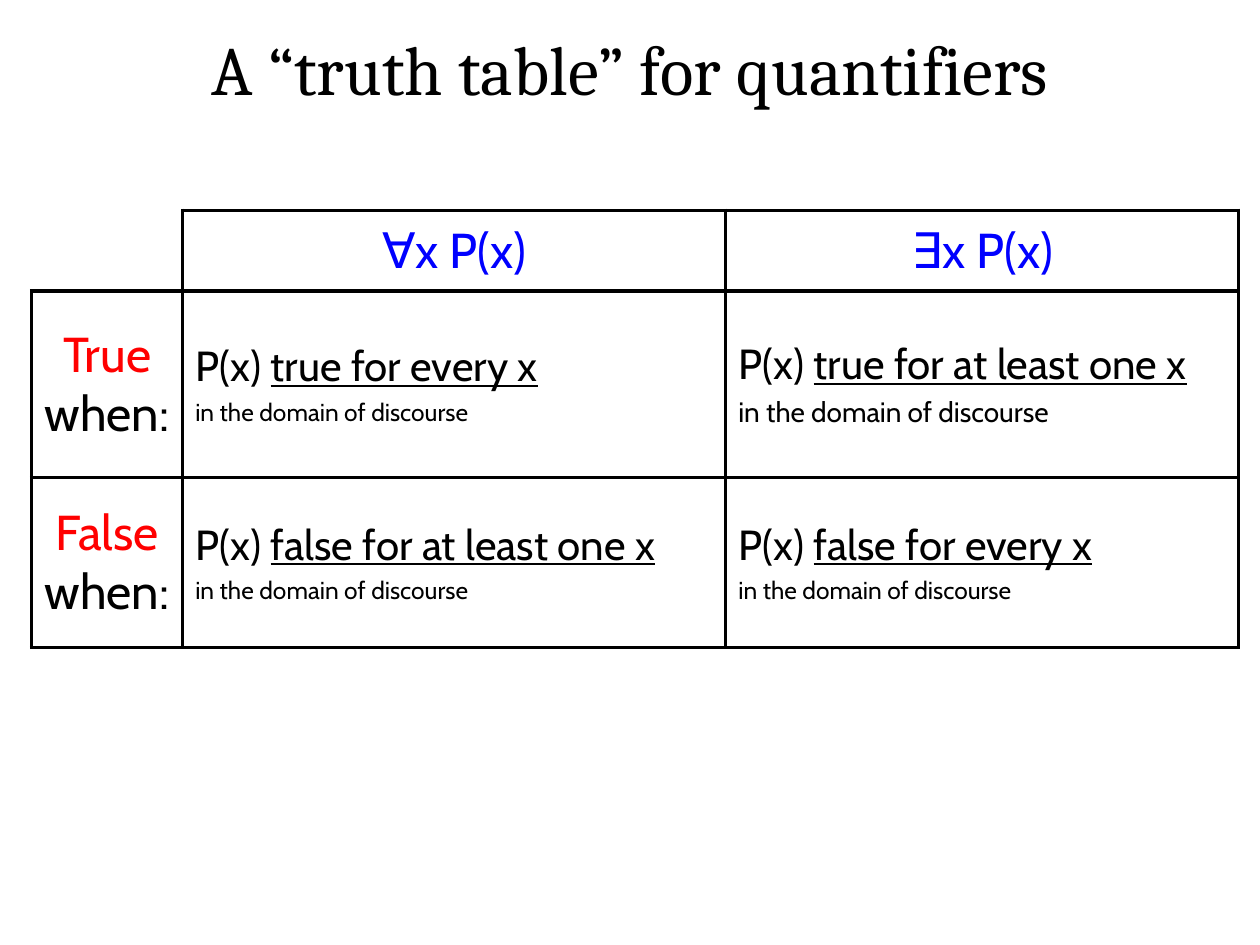
from lxml import etree
from pptx import Presentation
from pptx.dml.color import RGBColor
from pptx.enum import text
from pptx.oxml import ns
from pptx.util import Inches, Pt

COLORS = {"black": "000000", "formula": "0000FF", "verdict": "FF0000"}
DOMAIN = "in the domain of discourse"


def add_paragraph(p, runs, size, align):
    """Fill a paragraph with (text, color, underline) runs."""
    p.alignment = align
    p.font.size = Pt(size)
    p.font.name = "Cabin"
    p.space_before = Pt(round(size * 0.2, 1))
    for words, color, underline in runs:
        r = p.add_run()
        r.text = words
        r.font.color.rgb = RGBColor.from_string(COLORS[color])
        if underline:
            r.font.underline = True


def set_border(cell, index, side, visible):
    """Draw one cell edge; edges come before the fill in the cell properties."""
    tc_pr = cell._tc.get_or_add_tcPr()
    ln = etree.Element(ns.qn(f"a:ln{side}"), w=str(Pt(2.25)))
    if visible:
        fill = etree.SubElement(ln, ns.qn("a:solidFill"))
        etree.SubElement(fill, ns.qn("a:srgbClr"), val=COLORS["black"])
    else:
        etree.SubElement(ln, ns.qn("a:noFill"))
    tc_pr.insert(index, ln)


prs = Presentation()
prs.slide_width, prs.slide_height = Inches(10), Inches(7.5)
s = prs.slides.add_slide(prs.slide_layouts[5])

# Title
title = s.shapes.title
title.left, title.top = Inches(0), Inches(0.13)
title.width, title.height = Inches(10), Inches(0.81)
tf = title.text_frame
tf.text = "A “truth table” for quantifiers"
tf.vertical_anchor = text.MSO_ANCHOR.MIDDLE
p = tf.paragraphs[0]
p.alignment = text.PP_ALIGN.CENTER
p.font.size = Pt(39.6)
p.font.name = "Cambria"
p.font.color.rgb = RGBColor.from_string(COLORS["black"])

# Table grid
widths = [1.2, 4.31, 4.07]
heights = [0.64, 1.48, 1.35]
table = s.shapes.add_table(3, 3, Inches(0.25), Inches(1.67),
                           Inches(sum(widths)), Inches(sum(heights))).table
table.first_row = table.horz_banding = False
for column, width in zip(table.columns, widths):
    column.width = Inches(width)
for row, height in zip(table.rows, heights):
    row.height = Inches(height)

# Cell fills and borders: the corner cell is open at its left and top
for r in range(3):
    for c in range(3):
        cell = table.cell(r, c)
        cell.vertical_anchor = text.MSO_ANCHOR.MIDDLE
        cell.fill.background()
        for i, side in enumerate("LRTB"):
            set_border(cell, i, side, (r, c) != (0, 0) or side in "RB")

# Column headings
for c, formula in enumerate(["∀x P(x)", "∃x P(x)"], start=1):
    add_paragraph(table.cell(0, c).text_frame.paragraphs[0],
                  [(formula, "formula", False)], 28, text.PP_ALIGN.CENTER)

# Row headings and conditions, each with the size of its domain note
rows = [
    ("True", [("true for every x", 14), ("true for at least one x", 16)]),
    ("False", [("false for at least one x", 14), ("false for every x", 14)]),
]
for r, (verdict, conditions) in enumerate(rows, start=1):
    add_paragraph(table.cell(r, 0).text_frame.paragraphs[0],
                  [(verdict, "verdict", False), (" when:", "black", False)],
                  28, text.PP_ALIGN.CENTER)
    for c, (condition, note_size) in enumerate(conditions, start=1):
        tf = table.cell(r, c).text_frame
        add_paragraph(tf.paragraphs[0],
                      [("P(x) ", "black", False), (condition, "black", True)],
                      24, text.PP_ALIGN.LEFT)
        add_paragraph(tf.add_paragraph(), [(DOMAIN, "black", False)],
                      note_size, text.PP_ALIGN.LEFT)

prs.save("out.pptx")
